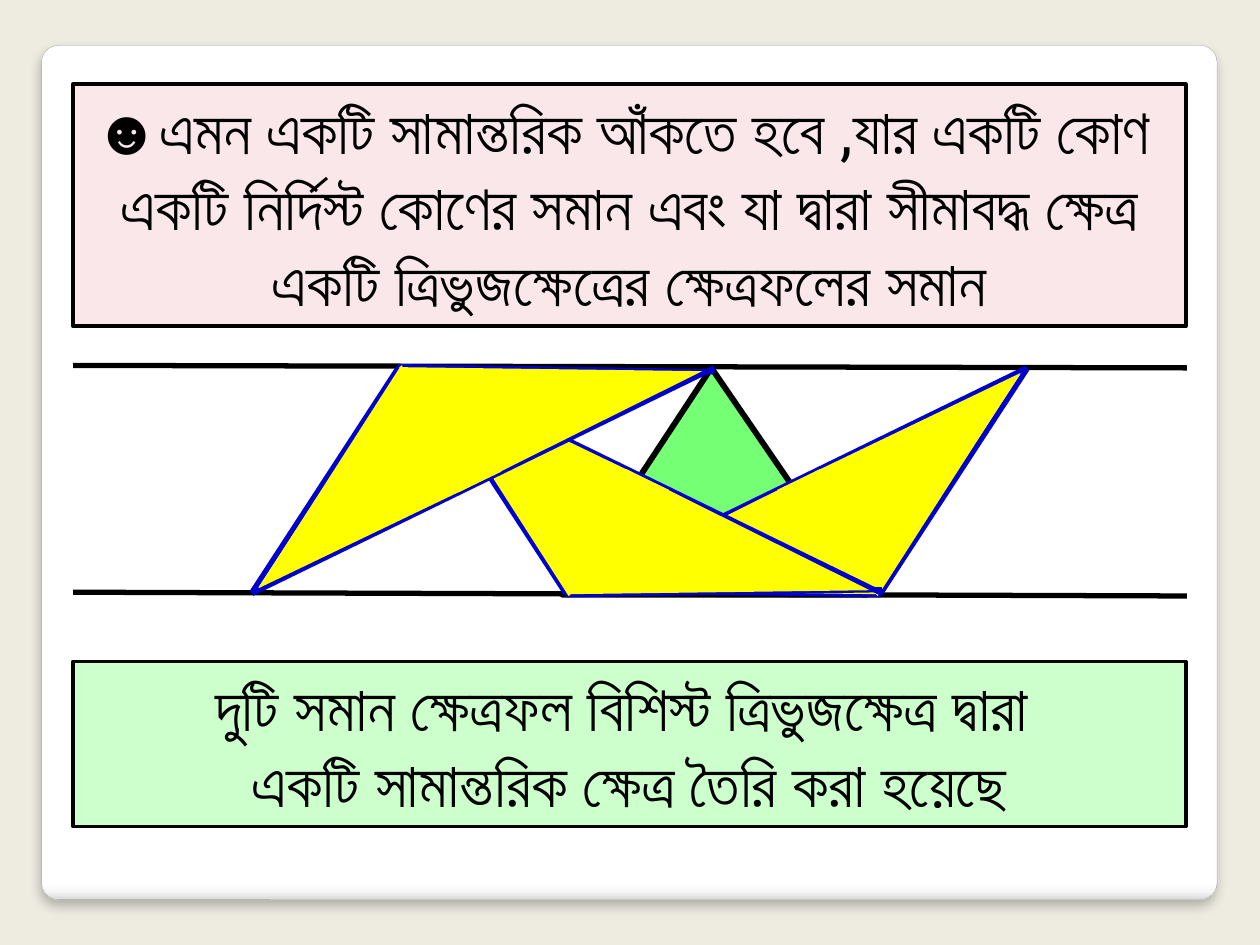
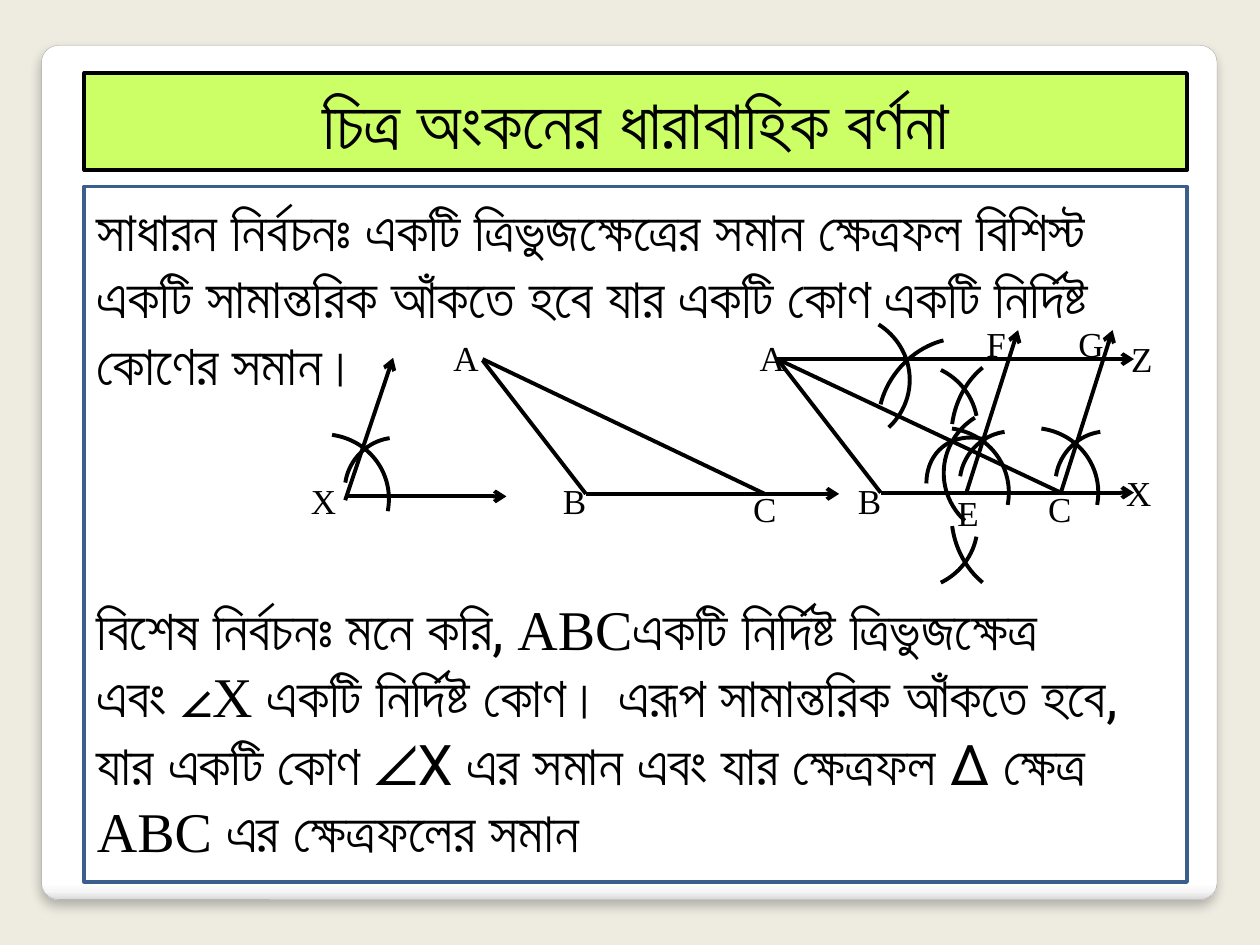
from dataclasses import dataclass

from lxml.etree import SubElement
from pptx import Presentation
from pptx.dml.color import RGBColor
from pptx.enum.shapes import MSO_CONNECTOR, MSO_SHAPE
from pptx.enum.text import MSO_ANCHOR, MSO_AUTO_SIZE, PP_ALIGN
from pptx.oxml.ns import qn
from pptx.util import Inches, Pt


@dataclass(frozen=True)
class Theme:
    backdrop: str = "EEECE1"
    ink: str = "000000"
    white: str = "FFFFFF"
    panel_edge: str = "A4A4A4"
    pink: str = "F9E7E9"
    mint: str = "CDFFCD"
    lime: str = "CCFF66"
    green: str = "75FF75"
    yellow: str = "FFFF00"
    blue: str = "0000CC"
    frame: str = "3A5F8C"
    bangla: str = "Roboto"
    latin: str = "Times New Roman"
    title: int = 40
    statement: int = 36
    body: int = 32
    label: int = 20
    stroke: float = 2.25
    bold_stroke: float = 3


theme = Theme()


def write_text(shape, paragraphs, size=theme.body, font=theme.bangla,
               align=PP_ALIGN.LEFT, anchor=MSO_ANCHOR.TOP, wrap=True):
    """Each paragraph is a list of strings or (string, font) pairs."""
    frame = shape.text_frame
    frame.word_wrap = wrap
    frame.auto_size = MSO_AUTO_SIZE.NONE
    frame.vertical_anchor = anchor
    for index, pieces in enumerate(paragraphs):
        para = frame.add_paragraph() if index else frame.paragraphs[0]
        para.alignment = align
        for piece in pieces:
            text, face = (piece, font) if isinstance(piece, str) else piece
            span = para.add_run()
            span.text = text
            span.font.size = Pt(size)
            span.font.color.rgb = RGBColor.from_string(theme.ink)
            span.font.name = face
            SubElement(span.font._element, qn("a:cs"), typeface=face)


def style(shape, fill=None, line=None, width=theme.stroke, rotation=0,
          flip=None, adjust=(), arrow=False):
    """Format a shape or a connector; flip is "flipH" or "flipV"."""
    properties = shape.element.spPr
    if line:
        shape.line.color.rgb = RGBColor.from_string(line)
        shape.line.width = Pt(width)
    else:
        shape.line.fill.background()
    if hasattr(shape, "begin_x"):
        if arrow:
            SubElement(shape.line._get_or_add_ln(), qn("a:tailEnd"), type="arrow")
        SubElement(properties, qn("a:effectLst"))
        return
    if fill:
        shape.fill.solid()
        shape.fill.fore_color.rgb = RGBColor.from_string(fill)
    else:
        shape.fill.background()
    if not shape.is_placeholder:
        shape.shadow.inherit = False
    shape.rotation = rotation
    if flip:
        properties.find(qn("a:xfrm")).set(flip, "1")
    for index, value in enumerate(adjust):
        shape.adjustments[index] = value


deck = Presentation()
deck.slide_width, deck.slide_height = Inches(10), Inches(7.5)
title_only = deck.slide_layouts[5]
area_page = deck.slides.add_slide(title_only)
steps_page = deck.slides.add_slide(title_only)

# Shared backdrop and white panel on the master
master = deck.slide_master
master.background.fill.solid()
master.background.fill.fore_color.rgb = RGBColor.from_string(theme.backdrop)
panel = area_page.shapes.add_shape(
    MSO_SHAPE.ROUNDED_RECTANGLE, Inches(0.33), Inches(0.36), Inches(9.33), Inches(6.78))
style(panel, fill=theme.white, line=theme.panel_edge, width=0.16, adjust=[0.02])
panel_properties = panel.element.spPr
solid = panel_properties.find(qn("a:solidFill"))
gradient = SubElement(panel_properties, qn("a:gradFill"))
stops = SubElement(gradient, qn("a:gsLst"))
for percent, color in ((0, theme.white), (98, theme.white), (99, "F7F7F7"), (100, "DADADA")):
    stop = SubElement(stops, qn("a:gs"), pos=str(percent * 1000))
    SubElement(stop, qn("a:srgbClr"), val=color)
SubElement(gradient, qn("a:lin"), ang="5400000", scaled="0")
panel_properties.replace(solid, gradient)
shadow = SubElement(panel_properties.find(qn("a:effectLst")), qn("a:outerShdw"),
                    blurRad=str(Pt(6)), dist=str(Pt(4)), dir="5400000", rotWithShape="0")
shadow_color = SubElement(shadow, qn("a:srgbClr"), val=theme.ink)
SubElement(shadow_color, qn("a:alpha"), val="25000")
master.shapes.element.insert(2, panel.element)

# Titles of both slides
titles = [
    (area_page, (0.58, 0.67, 8.83, 1.92), theme.pink, theme.statement, [
        [("☻", theme.latin), "এমন একটি সামান্তরিক আঁকতে হবে ,যার একটি কোণ "],
        ["একটি নির্দিস্ট কোণের সমান এবং যা দ্বারা সীমাবদ্ধ ক্ষেত্র"],
        ["একটি ত্রিভুজক্ষেত্রের ক্ষেত্রফলের সমান"]]),
    (steps_page, (0.67, 0.58, 8.75, 0.77), theme.lime, theme.title,
     [["চিত্র অংকনের ধারাবাহিক বর্ণনা"]]),
]
for page, place, color, size, paragraphs in titles:
    title = page.shapes.title
    title.left, title.top, title.width, title.height = map(Inches, place)
    style(title, fill=color, line=theme.ink)
    write_text(title, paragraphs, size=size, align=PP_ALIGN.CENTER, anchor=MSO_ANCHOR.MIDDLE)

# Slide 1: parallel lines and the green triangle between them
for left_y, right_y in ((2.9, 2.92), (4.7, 4.73)):
    parallel = area_page.shapes.add_connector(
        MSO_CONNECTOR.STRAIGHT, Inches(0.58), Inches(left_y), Inches(9.42), Inches(right_y))
    style(parallel, line=theme.ink, width=theme.bold_stroke)
green_triangle = area_page.shapes.add_shape(
    MSO_SHAPE.ISOSCELES_TRIANGLE, Inches(4.46), Inches(2.92), Inches(2.42), Inches(1.8))
style(green_triangle, fill=theme.green, line=theme.ink, width=3.35, adjust=[0.49])

# Slide 1: conclusion
conclusion = area_page.shapes.add_shape(
    MSO_SHAPE.RECTANGLE, Inches(0.58), Inches(5.25), Inches(8.83), Inches(1.31))
style(conclusion, fill=theme.mint, line=theme.ink)
write_text(conclusion, [["দুটি সমান ক্ষেত্রফল বিশিস্ট ত্রিভুজক্ষেত্র দ্বারা "],
                        ["একটি সামান্তরিক ক্ষেত্র তৈরি করা হয়েছে"]],
           size=theme.statement, align=PP_ALIGN.CENTER, anchor=MSO_ANCHOR.MIDDLE)

# Slide 1: one yellow triangle, then its mirror image, then its half turn
edges = [((4.48, 4.68), (6.99, 4.72)), ((6.99, 4.71), (8.15, 2.93)), ((4.48, 4.71), (8.15, 2.92))]
halves = [  # centre, width, height, rotation, apex
    (7.31, 3.61, 1.16, 2.04, 46.7, 0.56),
    (5.77, 4.68, 1.1, 2.16, 244.7, 0.96),
]
placements = [  # x offset and sign, y offset and sign, turn, flip
    (0, 1, 0, 1, 0, None),
    (11.48, -1, 0, 1, 0, "flipH"),
    (10.15, -1, 7.63, -1, 180, None),
]
for x_offset, x_sign, y_offset, y_sign, turn, flip in placements:
    for (x1, y1), (x2, y2) in edges:
        edge = area_page.shapes.add_connector(
            MSO_CONNECTOR.STRAIGHT,
            Inches(x_offset + x_sign * x1), Inches(y_offset + y_sign * y1),
            Inches(x_offset + x_sign * x2), Inches(y_offset + y_sign * y2))
        style(edge, line=theme.blue, width=theme.bold_stroke)
    for x, y, width, height, rotation, apex in halves:
        half = area_page.shapes.add_shape(
            MSO_SHAPE.ISOSCELES_TRIANGLE,
            Inches(x_offset + x_sign * x - width / 2), Inches(y_offset + y_sign * y - height / 2),
            Inches(width), Inches(height))
        angle = -rotation if flip else rotation + turn
        style(half, fill=theme.yellow, rotation=angle % 360, flip=flip, adjust=[apex])

# Slide 2: straight lines as start, end, arrow
strokes = [
    (3.83, 2.85, 6.07, 3.92, False),
    (6.17, 2.85, 8.42, 3.91, False),
    (2.74, 3.97, 3.12, 2.84, True),
    (2.74, 3.94, 4.02, 3.94, True),
    (6.17, 2.85, 9, 2.85, True),
]
for x, y in ((4.65, 3.92), (6.99, 3.91)):
    strokes += [(x, y, x + 2.01, y, True), (x, y, x - 0.82, y - 1.06, False)]
for x in (7.67, 8.42):
    strokes.append((x, 3.91, x + 0.41, 2.62, True))
for x1, y1, x2, y2, arrow in strokes:
    stroke = steps_page.shapes.add_connector(
        MSO_CONNECTOR.STRAIGHT, Inches(x1), Inches(y1), Inches(x2), Inches(y2))
    style(stroke, line=theme.ink, arrow=arrow)

# Slide 2: compass arcs as place, rotation, flip, start and end in degrees
arcs = [
    (6.13, 2.49, 1.09, 1.05, 0, None, 304.12, 44.88),
    (7.02, 2.64, 1, 1.21, 221.7, None, 322.21, 44.88),
    (7.49, 3.23, 1.09, 1.05, 0, "flipH", 304.12, 44.88),
    (7.3, 3.53, 0.99, 0.8, 229.7, None, 322.21, 44.88),
]
for wide_x, narrow_x, y in ((2, 2.75, 3.45), (6.92, 7.63, 3.4), (7.63, 8.39, 3.4)):
    arcs += [(wide_x, y, 1.09, 1.05, 335.7, None, 304.12, 33.08),
             (narrow_x, y + 0.01, 0.73, 0.79, 221.7, None, 322.21, 44.88)]
for drop, flip, sign in ((0, None, 1), (0.75, "flipV", -1)):
    arcs += [(6.67, 2.88 + drop, 1.09, 1.05, -10.9 * sign, flip, 309.22, 359.87),
             (7.56, 2.79 + drop, 1, 1.21, 196.4 * sign, flip, 346.98, 44.88)]
for x, y, width, height, rotation, flip, start, end in arcs:
    arc = steps_page.shapes.add_shape(
        MSO_SHAPE.ARC, Inches(x), Inches(y), Inches(width), Inches(height))
    # Adjustments count 100000ths, angles 60000ths of a degree
    style(arc, line=theme.ink, rotation=rotation % 360, flip=flip,
          adjust=[start * 0.6, end * 0.6])

# Slide 2: point labels
labels = [
    ("A", 3.5, 2.62), ("B", 4.37, 3.76), ("C", 5.88, 3.82), ("X", 2.37, 3.76),
    ("A", 5.93, 2.62), ("B", 6.71, 3.76), ("C", 8.22, 3.82), ("E", 7.5, 3.85),
    ("G", 8.46, 2.51), ("F", 7.73, 2.51), ("Z", 8.88, 2.63), ("X", 8.84, 3.69),
]
for letter, x, y in labels:
    box = steps_page.shapes.add_textbox(Inches(x), Inches(y), Inches(0.4), Inches(0.44))
    write_text(box, [[letter]], size=theme.label, font=theme.latin, wrap=False)

# Slide 2: general and particular statements
statements = [
    (1.5, 1.72, [
        ["সাধারন নির্বচনঃ একটি ত্রিভুজক্ষেত্রের সমান ক্ষেত্রফল বিশিস্ট"],
        ["একটি সামান্তরিক আঁকতে হবে যার একটি কোণ একটি নির্দিষ্ট"],
        ["কোণের সমান।"]]),
    (4.67, 2.26, [
        ["বিশেষ নির্বচনঃ মনে করি, ", ("ABC", theme.latin), "একটি নির্দিষ্ট ত্রিভুজক্ষেত্র"],
        ["এবং ", ("∠X", theme.latin), " একটি নির্দিষ্ট কোণ। এরূপ সামান্তরিক আঁকতে হবে,"],
        ["যার একটি কোণ ∠X এর সমান এবং যার ক্ষেত্রফল Δ ক্ষেত্র"],
        [("ABC", theme.latin), " এর ক্ষেত্রফলের সমান"]]),
]
for top, height, paragraphs in statements:
    box = steps_page.shapes.add_textbox(Inches(0.67), Inches(top), Inches(8.75), Inches(height))
    write_text(box, paragraphs)

# Slide 2: frame around the statements
border = steps_page.shapes.add_shape(
    MSO_SHAPE.RECTANGLE, Inches(0.67), Inches(1.48), Inches(8.75), Inches(5.52))
style(border, line=theme.frame)

deck.save("out.pptx")
